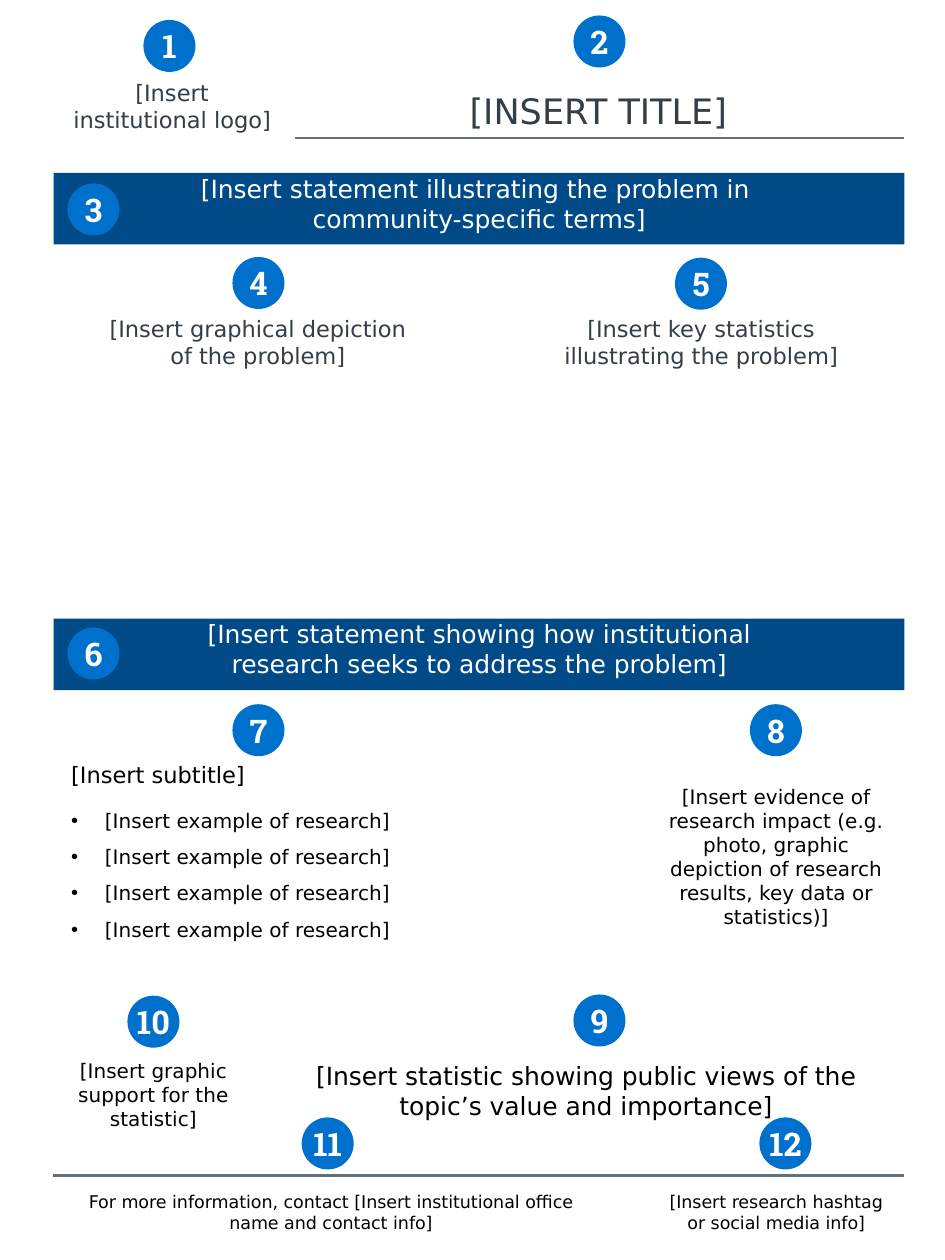
from lxml import etree
from pptx import Presentation
from pptx.dml.color import RGBColor
from pptx.enum.shapes import MSO_CONNECTOR, MSO_SHAPE
from pptx.enum.text import MSO_ANCHOR, MSO_AUTO_SIZE, PP_ALIGN
from pptx.oxml.ns import qn
from pptx.util import Pt

RECT, OVAL = MSO_SHAPE.RECTANGLE, MSO_SHAPE.OVAL
LINE = MSO_CONNECTOR.STRAIGHT
TOP, MID = MSO_ANCHOR.TOP, MSO_ANCHOR.MIDDLE
LEFT, MIDDLE = PP_ALIGN.LEFT, PP_ALIGN.CENTER
GROW = MSO_AUTO_SIZE.SHAPE_TO_FIT_TEXT

WHITE = RGBColor(0xFF, 0xFF, 0xFF)
BLACK = RGBColor(0, 0, 0)
SLATE = RGBColor(0x33, 0x3E, 0x48)
GREY = RGBColor(0x66, 0x6E, 0x76)
NAVY = RGBColor(0x00, 0x4A, 0x88)
BLUE = RGBColor(0x00, 0x70, 0xCD)
SANS, SLAB = "DejaVu Sans", "Roboto Slab"

EDGE, FULL = 21.4, 340.4  # left margin and content width
RIGHT = EDGE + FULL
DOT = 20.8

deck = Presentation()
deck.slide_width, deck.slide_height = Pt(378), Pt(504)
slide = deck.slides.add_slide(deck.slide_layouts[6])


def add_box(kind, place, lines, size, color, fill=None, edge=0, flush=False,
            align=MIDDLE, font=SANS, gap=5):
    box = slide.shapes.add_shape(kind, *[Pt(n) for n in place])
    box.shadow.inherit = False
    if fill is None:
        box.fill.background()
    else:
        box.fill.solid()
        box.fill.fore_color.rgb = fill
    if edge:
        box.line.color.rgb = WHITE
        box.line.width = Pt(edge)
    else:
        box.line.fill.background()
    frame = box.text_frame
    frame.word_wrap = True
    frame.vertical_anchor = TOP
    if flush:
        frame.margin_left = frame.margin_right = 0
        frame.margin_top = frame.margin_bottom = 0
    for i, line in enumerate(lines):
        para = frame.add_paragraph() if i else frame.paragraphs[0]
        para.text = line
        para.alignment = align
        para.space_before = Pt(gap)
        for run in para.runs:
            run.font.name = font
            run.font.size = Pt(size)
            run.font.color.rgb = color
    return box


# Header: logo slot and title
logo = add_box(RECT, (23.8, 31.7, 90, 21.6), ["[Insert\ninstitutional logo]"],
               9, SLATE, edge=0.75, flush=True)
title = add_box(RECT, (117.4, 36, 244, 17.3), ["[INSERT TITLE]"],
                14, SLATE, edge=0.75, flush=True)
for box in (logo, title):
    box.text_frame.auto_size = GROW

# Banner statements
banners = [
    (69.2, "[Insert statement illustrating the problem in \n"
           "community-specific terms]"),
    (247.5, "[Insert statement showing how institutional\n"
            "research seeks to address the problem]"),
]
for y, text in banners:
    band = add_box(RECT, (EDGE, y, FULL, 28.6), [text], 10, WHITE,
                   fill=NAVY, flush=True)
    band.text_frame.auto_size = GROW

# Problem: graphic and key statistics
add_box(RECT, (EDGE, 122.4, 163.4, 116),
        ["[Insert graphical depiction\nof the problem]"],
        9, SLATE, fill=WHITE, edge=1)
add_box(RECT, (199, 122.4, 162.8, 123.8),
        ["[Insert key statistics\nillustrating the problem]"],
        9, SLATE, fill=WHITE)

# Research: subtitle
add_box(RECT, (EDGE, 301, 163.4, 18), ["[Insert subtitle]"],
        9, BLACK, fill=WHITE, edge=1, align=LEFT)

# Rules under the title and above the footer
for x, y in ((118.2, 55.3), (EDGE, 470.3)):
    rule = slide.shapes.add_connector(LINE, Pt(x), Pt(y), Pt(RIGHT), Pt(y))
    rule.line.color.rgb = GREY
    rule.line.width = Pt(1)
    etree.SubElement(rule._element.spPr, qn("a:effectLst"))

# Public views: statistic and its graphic
add_box(RECT, (107.3, 420.5, 254.2, 31.7),
        ["[Insert statistic showing public views of the "
         "topic’s value and importance]"],
        10, BLACK, fill=WHITE, edge=1)
add_box(RECT, (EDGE, 419.8, 80, 31.7),
        ["[Insert graphic support for the statistic]"],
        8, BLACK, fill=WHITE, edge=1)

# Research: bulleted examples and evidence
items = add_box(RECT, (EDGE, 319.7, 217.4, 104.4),
                ["[Insert example of research]"] * 4,
                8, BLACK, edge=1, align=LEFT)
for para in items.text_frame.paragraphs:
    props = para._p.get_or_add_pPr()
    props.set("marL", str(Pt(13.5)))
    props.set("indent", str(-Pt(13.5)))
    etree.SubElement(props, qn("a:buFont")).set("typeface", "Arial")
    etree.SubElement(props, qn("a:buChar")).set("char", "•")
add_box(RECT, (259.2, 310.3, 102.6, 104.4),
        ["[Insert evidence of research impact (e.g. photo, graphic depiction "
         "of research results, key data or statistics)]"],
        8, BLACK, edge=1)

# Footer: contact and social media
add_box(RECT, (25.9, 473, 213, 20.9),
        ["For more information, contact [Insert institutional office "
         "name and contact info]"], 7, BLACK, edge=1)
add_box(RECT, (259.2, 473, 102.6, 20.9),
        ["[Insert research hashtag or social media info]"],
        7, BLACK, edge=1)

# Numbered dots, 1 to 12
spots = [(57.4, 8), (229.4, 6.2), (27, 73.4), (93, 102.8), (270, 103.1),
         (27, 251), (93, 281.7), (300, 281.7), (229.4, 397.8), (51, 398.3),
         (120.7, 447), (303.8, 447)]
for num, (x, y) in enumerate(spots, 1):
    dot = add_box(OVAL, (x, y, DOT, DOT), [str(num)], 13, WHITE, fill=BLUE,
                  flush=True, font=SLAB, gap=0)
    dot.text_frame.vertical_anchor = MID
    dot.text_frame.word_wrap = False
    dot.text_frame.paragraphs[0].runs[0].font.bold = True

deck.save("out.pptx")
